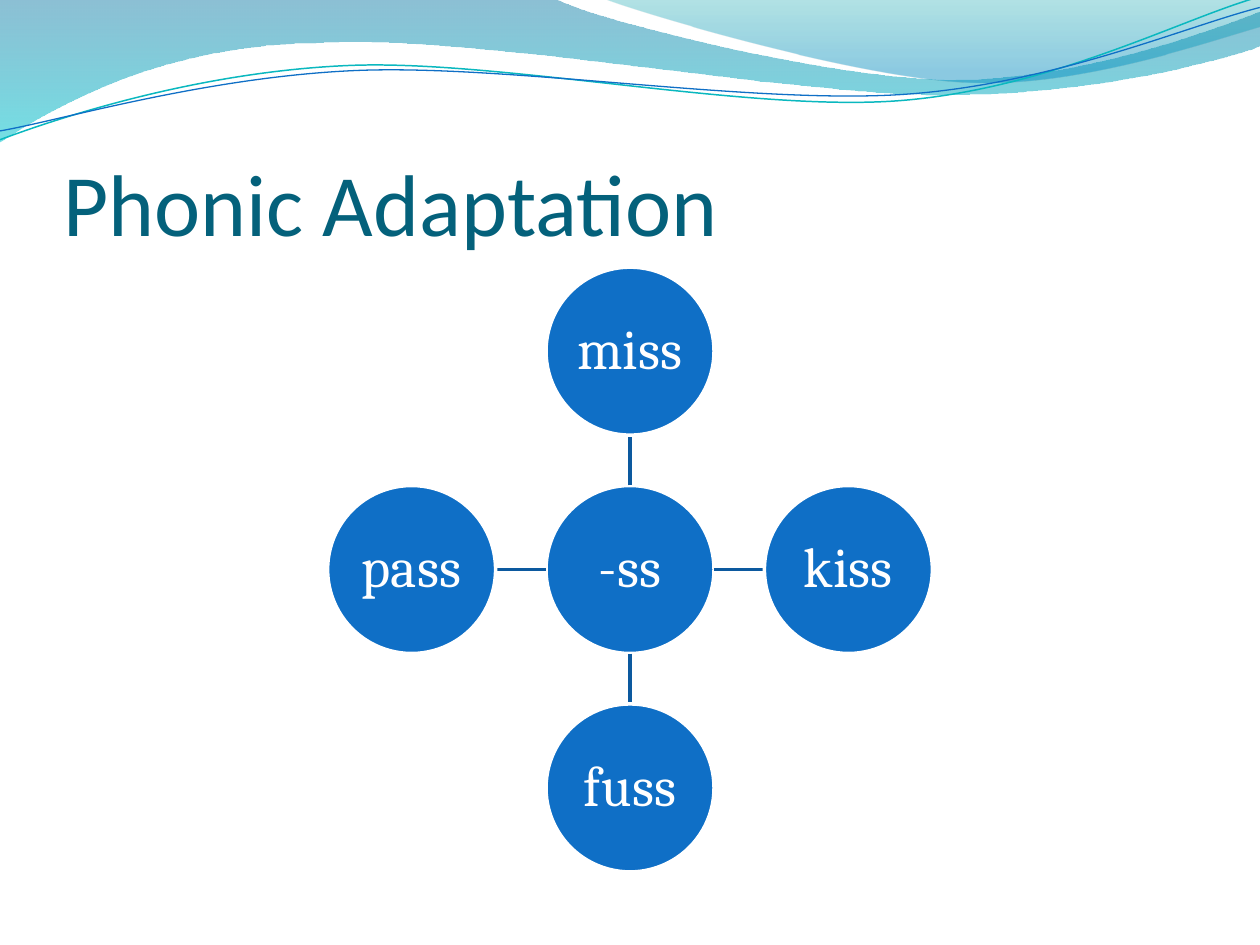
import math
import pptx
import pptx.util
import pptx.dml.color
import pptx.enum.shapes
import pptx.enum.text
import pptx.oxml
import pptx.oxml.ns
from lxml import etree

Pt = pptx.util.Pt
Inches = pptx.util.Inches
ANCHOR = pptx.enum.text.MSO_ANCHOR
ALIGN = pptx.enum.text.PP_ALIGN
qn = pptx.oxml.ns.qn
COLS, ROWS = 40, 30
TILT = 2.7

FILLS = [
    ([(0, -1), (440, -1), (476, 17, 664, 63, 758, 63), (853, 63, 958, 26, 1000, 9),
      (1001, 36), (983, 44, 870, 76, 746, 75), (622, 75, 382, 28, 257, 34),
      (129, 35, 46, 83, -1, 113), (0, -1)],
     [(0, "0074A1", 45), (100, "00C6CF", 55)]),
    ([(479, -1), (509, 11, 682, 62, 769, 65), (856, 69, 961, 32, 1000, 21),
      (1000, 0), (479, -1)],
     [(0, "00A1A9", 30), (80, "008BBF", 45)]),
]
LINES = [
    ([(0, 111), (48, 93, 158, 57, 277, 52), (395, 47, 593, 89, 713, 80),
      (833, 71, 938, 15, 998, -2)], "0AB8BF", 0.85),
    ([(0, 104), (47, 96, 164, 61, 283, 56), (403, 51, 597, 83, 717, 75),
      (836, 67, 941, 21, 1000, 6)], "0F6FC6", 0.75),
]
SPOKES = [("miss", 0, -1), ("kiss", 1, 0), ("fuss", 0, 1), ("pass", -1, 0)]


def color(code):
    return pptx.dml.color.RGBColor.from_string(code)


def stroke(shape, code, width):
    shape.line.color.rgb = color(code)
    shape.line.width = Pt(width)


def pairs(part):
    return list(zip(part[::2], part[1::2]))


def turn(dots, angle):
    mid = [(dots[0][axis] + dots[-1][axis]) / 2 for axis in (0, 1)]
    cos, sin = math.cos(math.radians(angle)), math.sin(math.radians(angle))
    return [(mid[0] + (x - mid[0]) * cos - (y - mid[1]) * sin,
             mid[1] + (x - mid[0]) * sin + (y - mid[1]) * cos) for x, y in dots]


def bend(shape, parts):
    track = next(shape._element.iter(qn("a:path")))
    legs = iter(track.findall(qn("a:lnTo")))
    for part in parts:
        group = [next(legs) for _ in pairs(part)]
        if len(group) == 3:
            arc = etree.Element(qn("a:cubicBezTo"))
            group[0].addprevious(arc)
            for leg in group:
                arc.append(leg[0])
                track.remove(leg)


def curve(slide, box, parts, close, angle=0):
    left, top, width, _ = box
    unit = width / 1000
    dots = [(left + x * unit, top + y * unit)
            for part in parts for x, y in pairs(part)]
    dots = turn(dots, angle)
    build = slide.shapes.build_freeform(*dots[0], scale=1.0)
    build.add_line_segments(dots[1:], close=close)
    shape = build.convert_to_shape()
    bend(shape, parts[1:])
    shape.rotation = -angle
    shape.shadow.inherit = False
    return shape


def shade(shape, stops):
    shape.fill.gradient()
    grad = shape._element.spPr.find(qn("a:gradFill"))
    for child in list(grad):
        grad.remove(child)
    rows = etree.SubElement(grad, qn("a:gsLst"))
    for place, code, alpha in stops:
        stop = etree.SubElement(rows, qn("a:gs"), pos=str(place * 1000))
        tone = etree.SubElement(stop, qn("a:srgbClr"), val=code)
        etree.SubElement(tone, qn("a:alpha"), val=str(alpha * 1000))
    etree.SubElement(grad, qn("a:lin"), ang="5400000", scaled="0")


def add_waves(slide, box):
    for parts, stops in FILLS:
        shape = curve(slide, box, parts, True)
        shade(shape, stops)
        shape.line.fill.background()
    for parts, code, width in LINES:
        shape = curve(slide, box, parts, False, TILT)
        shape.fill.background()
        stroke(shape, code, width)


def add_title(slide, box, text):
    title = slide.shapes.title
    slide.shapes._spTree.append(title._element)
    title.left, title.top, title.width, title.height = box
    frame = title.text_frame
    frame.text = text
    frame.auto_size = pptx.enum.text.MSO_AUTO_SIZE.NONE
    frame.vertical_anchor = ANCHOR.BOTTOM
    frame.margin_left = frame.margin_right = frame.margin_bottom = 0
    frame.margin_top = Inches(0.05)
    para = frame.paragraphs[0]
    para.alignment = ALIGN.LEFT
    para.font.name = "Calibri"
    para.font.size = Pt(50)
    para.font.color.rgb = color("04617B")


def add_node(slide, x, y, size, text):
    node = slide.shapes.add_shape(
        pptx.enum.shapes.MSO_SHAPE.OVAL,
        int(x - size / 2), int(y - size / 2), int(size), int(size))
    node.shadow.inherit = False
    node.fill.solid()
    node.fill.fore_color.rgb = color("0F6FC6")
    stroke(node, "FFFFFF", 2)
    frame = node.text_frame
    frame.text = text
    frame.word_wrap = True
    frame.vertical_anchor = ANCHOR.MIDDLE
    frame.margin_left = frame.margin_right = Inches(0.02)
    frame.margin_top = frame.margin_bottom = Inches(0.02)
    para = frame.paragraphs[0]
    para.alignment = ALIGN.CENTER
    para.line_spacing = 0.9
    para.font.name = "Cambria"
    para.font.size = Pt(32)
    para.font.color.rgb = color("FFFFFF")


def add_spoke(slide, x, y, dx, dy, near, far):
    spoke = slide.shapes.add_connector(
        pptx.enum.shapes.MSO_CONNECTOR.STRAIGHT,
        int(x + dx * near), int(y + dy * near),
        int(x + dx * far), int(y + dy * far))
    stroke(spoke, "0C599F", 2)
    etree.SubElement(spoke._element.spPr, qn("a:effectLst"))


def add_hub(slide, box, core, spokes):
    left, top, width, height = box
    x, y = left + width / 2, top + height / 2
    size = width / 3.6
    reach = size * 1.3
    add_node(slide, x, y, size, core)
    for text, dx, dy in spokes:
        add_spoke(slide, x, y, dx, dy, size / 2, reach - size / 2)
        add_node(slide, x + dx * reach, y + dy * reach, size, text)


def main():
    deck = pptx.Presentation()
    deck.slide_width, deck.slide_height = Inches(10), Inches(7.5)
    col, row = deck.slide_width / COLS, deck.slide_height / ROWS

    def area(x, y, w, h):
        return int(col * x), int(row * y), int(col * w), int(row * h)

    slide = deck.slides.add_slide(deck.slide_layouts[5])
    add_waves(slide, area(0, 0, COLS, 4.5))
    add_title(slide, area(2, 3.08, 36, 5), "Phonic Adaptation")
    add_hub(slide, area(10.4, 8.48, 19.2, 19.2), "-ss", SPOKES)
    deck.save("out.pptx")


if __name__ == "__main__":
    main()
